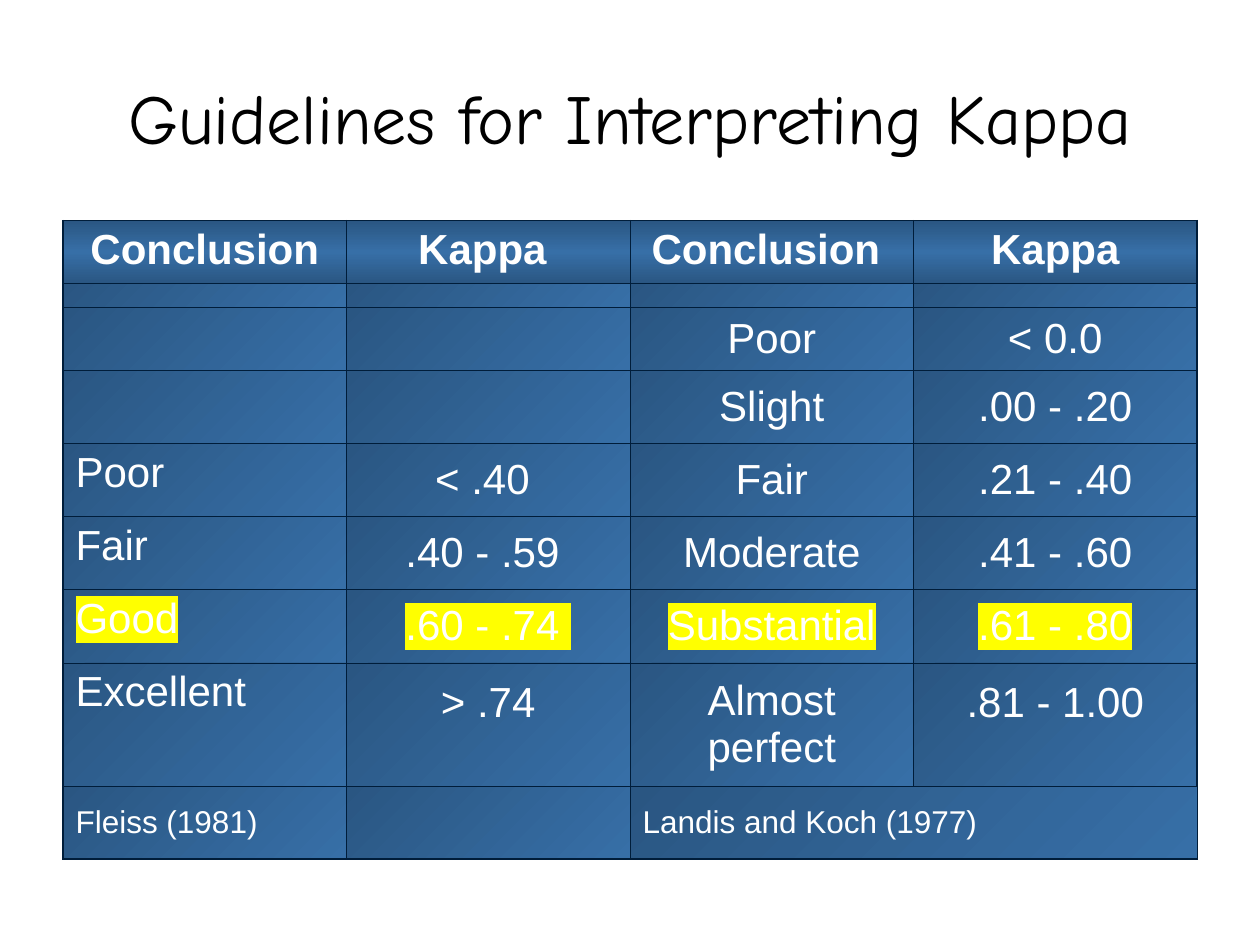
from lxml import etree
from pptx import Presentation
from pptx.dml.color import RGBColor
from pptx.enum.text import MSO_ANCHOR, PP_ALIGN
from pptx.oxml.ns import qn
from pptx.util import Inches, Pt

MIDDLE, TOP = MSO_ANCHOR.MIDDLE, MSO_ANCHOR.TOP
CENTER, LEFT = PP_ALIGN.CENTER, PP_ALIGN.LEFT
TITLE_ONLY = 5
COLORS = {"title": "000000", "text": "FFFFFF", "border": "001D3A",
          "dark": "2A5682", "light": "376FA7", "highlight": "FFFF00"}
HEADER_GRADIENT = (90, [(0, "dark"), (50, "light"), (100, "dark")])
BODY_GRADIENT = (45, [(0, "dark"), (100, "light")])
OUTER_WIDTH, INNER_WIDTH = 1, 0.25
ROW_HEIGHTS = [0.5, 0.19, 0.5, 0.58, 0.58, 0.58, 0.58, 0.98, 0.58]
ROWS = [
    ["Conclusion", "Kappa ", "Conclusion ", "Kappa"],
    ["", "", "", ""],
    ["", "", "Poor", "< 0.0"],
    ["", "", "Slight", ".00 - .20"],
    ["Poor", "< .40 ", "Fair", ".21 - .40"],
    ["Fair", ".40 - .59 ", "Moderate", ".41 - .60"],
    ["Good", ".60 - .74 ", "Substantial", ".61 - .80"],
    ["Excellent", "> .74", "Almost perfect", ".81 - 1.00"],
    ["Fleiss (1981)", "", "Landis and Koch (1977)", ""],
]
HEADER, SPACER, GOOD, EXCELLENT, SOURCE = 0, 1, 6, 7, 8


def add_color(parent, name):
    etree.SubElement(parent, qn("a:srgbClr"), val=COLORS[name])


def style_font(font, name, size, color, bold=False):
    font.name, font.size, font.bold = name, Pt(size), bold
    font.color.rgb = RGBColor.from_string(COLORS[color])


def add_border(properties, side, width):
    line = etree.SubElement(properties, qn(f"a:ln{side}"), w=str(Pt(width)))
    add_color(etree.SubElement(line, qn("a:solidFill")), "border")


def add_gradient(properties, gradient):
    angle, stops = gradient
    fill = etree.SubElement(properties, qn("a:gradFill"), rotWithShape="1")
    stop_list = etree.SubElement(fill, qn("a:gsLst"))
    for position, color in stops:
        stop = etree.SubElement(stop_list, qn("a:gs"), pos=str(position * 1000))
        add_color(stop, color)
    etree.SubElement(fill, qn("a:lin"), ang=str(angle * 60000), scaled="0")


def paint_cell(cell, row, column):
    properties = cell._tc.get_or_add_tcPr()
    edges = {"L": column == 0, "R": column == len(ROWS[0]) - 1,
             "T": row == 0, "B": row == len(ROWS) - 1}
    for side, outer in edges.items():
        add_border(properties, side, OUTER_WIDTH if outer else INNER_WIDTH)
    add_gradient(properties, HEADER_GRADIENT if row == HEADER else BODY_GRADIENT)


def write_cell(cell, row, column, text):
    para = cell.text_frame.paragraphs[0]
    first_column = column == 0
    source = row == SOURCE
    para.alignment = LEFT if source or first_column and row != HEADER else CENTER
    at_top = row == HEADER or first_column and not source
    cell.vertical_anchor = TOP if at_top else MIDDLE
    if row == EXCELLENT and column in (1, 3):
        cell.vertical_anchor = TOP
        cell.margin_top = Inches(0.13)
    style_font(para.font, "Arial", 18 if source else 24, "text", row == HEADER)
    span = para.add_run()
    span.text = text
    if row == GOOD:
        properties = span._r.get_or_add_rPr()
        add_color(etree.SubElement(properties, qn("a:highlight")), "highlight")


def shrink_empty_cell(cell):
    cell.margin_top = cell.margin_bottom = 0
    para = cell.text_frame.paragraphs[0]
    etree.SubElement(para._p, qn("a:endParaRPr"), sz="400")


def add_title(page, left, top, width, height):
    title = page.shapes.title
    title.left, title.top, title.width, title.height = left, top, width, height
    title.text_frame.text = "Guidelines for Interpreting Kappa"
    title.text_frame.vertical_anchor = MIDDLE
    para = title.text_frame.paragraphs[0]
    para.alignment = CENTER
    style_font(para.font, "Comic Neue", 40, "title")


def add_kappa_table(page, left, top, width, height):
    frame = page.shapes.add_table(len(ROWS), len(ROWS[0]), left, top, width, height)
    table = frame.table
    table.first_row = table.horz_banding = False
    for table_row, share in zip(table.rows, ROW_HEIGHTS):
        table_row.height = int(height * share / sum(ROW_HEIGHTS))
    for row, texts in enumerate(ROWS):
        for column, text in enumerate(texts):
            cell = table.cell(row, column)
            if text:
                write_cell(cell, row, column, text)
            elif row == SPACER:
                shrink_empty_cell(cell)
            paint_cell(cell, row, column)
    table.cell(SOURCE, 2).merge(table.cell(SOURCE, 3))


def main():
    deck = Presentation()
    deck.slide_width, deck.slide_height = Inches(10), Inches(7.5)
    page = deck.slides.add_slide(deck.slide_layouts[TITLE_ONLY])
    margin = int(deck.slide_width * 0.05)
    width = deck.slide_width - 2 * margin
    add_title(page, margin, Inches(0.3), width, Inches(1.25))
    add_kappa_table(page, margin, Inches(1.75), width, Inches(sum(ROW_HEIGHTS)))
    deck.save("out.pptx")


if __name__ == "__main__":
    main()
